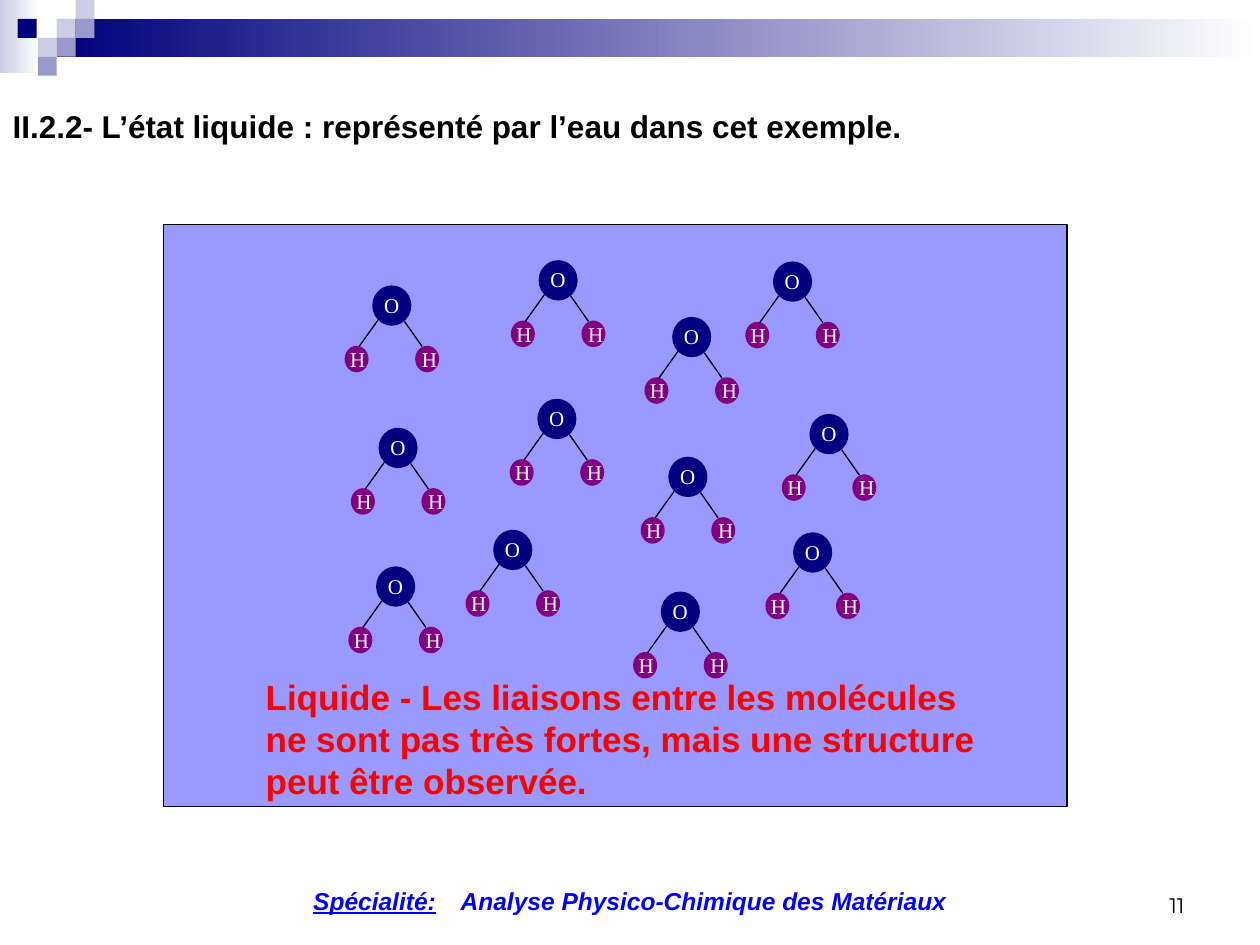
from pptx import Presentation
from pptx.dml.color import RGBColor
from pptx.enum.shapes import MSO_CONNECTOR, MSO_SHAPE
from pptx.enum.text import MSO_ANCHOR, MSO_AUTO_SIZE, PP_ALIGN
from pptx.oxml.ns import qn
from pptx.util import Inches, Pt
from lxml.etree import SubElement

TITLE = "II.2.2- L’état liquide : représenté par l’eau dans cet exemple."
CAPTION = ("Liquide - Les liaisons entre les molécules ne sont pas très fortes, "
           "mais une structure peut être observée.")
FOOTER = [("Spécialité:", True), ("\u2003Analyse Physico-Chimique des Matériaux", False)]
PAGE = "11"

BANDS = [((0, 0, 0.31, 0.58), "CCCCE6"), ((0.45, 0.15, 9.55, 0.3), "00007D")]
TILE = 0.15
TILES = [
    (0.45, 0.15, "CCCCE6"), (0.6, 0, "CCCCE6"), (0.6, 0.15, "9999CC"),
    (0.3, 0.3, "CCCCE6"), (0.14, 0.15, "00007D"), (0.45, 0.3, "9999CC"),
    (0.3, 0.45, "9999CC"),
]
PANEL = (1.3, 1.78, 7.17, 4.62)
MOLECULES = [
    (2.96, 2.27), (4.28, 2.07), (5.34, 2.52), (6.14, 2.08),
    (3.01, 3.4), (4.27, 3.17), (5.31, 3.63), (6.43, 3.29),
    (2.99, 4.5), (3.92, 4.21), (5.25, 4.7), (6.3, 4.23),
]
ATOMS = [
    ("H", (0.34, 0.48, 0.18, 0.2), (0.29, 0.43, 0.32, 0.3), "800080"),
    ("O", (0, 0, 0.3, 0.31), (-0.01, 0, 0.33, 0.3), "000080"),
    ("H", (-0.22, 0.48, 0.18, 0.2), (-0.28, 0.43, 0.32, 0.3), "800080"),
]
BONDS = [(0.04, 0.27, -0.11, 0.48), (0.25, 0.28, 0.39, 0.48)]


def rgb(color):
    return RGBColor.from_string(color)


def lengths(box, x=0, y=0):
    a, b, c, d = box
    return [Inches(v) for v in (a + x, b + y, c, d)]


def add_filled(shapes, kind, box, color, line=None, x=0, y=0):
    sp = shapes.add_shape(kind, *lengths(box, x, y))
    sp.shadow.inherit = False
    sp.fill.solid()
    sp.fill.fore_color.rgb = rgb(color)
    if line:
        sp.line.color.rgb = rgb(line)
        sp.line.width = Pt(0.75)
    else:
        sp.line.fill.background()
    return sp


def add_run(p, text, size, color, font="Arial", bold=False, italic=False, underline=False):
    r = p.add_run()
    r.text = text
    r.font.name, r.font.size = font, Pt(size)
    r.font.bold, r.font.italic, r.font.underline = bold, italic, underline
    r.font.color.rgb = rgb(color)


def add_text(shapes, box, x=0, y=0, wrap=True, align=PP_ALIGN.LEFT, anchor=MSO_ANCHOR.TOP):
    tf = shapes.add_textbox(*lengths(box, x, y)).text_frame
    tf.word_wrap = wrap
    tf.vertical_anchor = anchor
    p = tf.paragraphs[0]
    p.alignment = align
    return p


def add_bond(shapes, bond, x, y):
    x1, y1, x2, y2 = bond
    line = shapes.add_connector(MSO_CONNECTOR.STRAIGHT, Inches(x + x1), Inches(y + y1),
                                Inches(x + x2), Inches(y + y2))
    line.line.color.rgb = rgb("000000")
    line.line.width = Pt(0.75)
    SubElement(line._element.spPr, qn("a:effectLst"))


def add_molecule(s, x, y):
    shapes = s.shapes.add_group_shape().shapes
    for symbol, disc, label, color in ATOMS:
        add_filled(shapes, MSO_SHAPE.OVAL, disc, color, color, x, y)
        p = add_text(shapes, label, x, y, wrap=False)
        add_run(p, symbol, 12, "FFFFFF", "Times New Roman")
    for bond in BONDS:
        add_bond(shapes, bond, x, y)


def add_title(s):
    title = s.shapes.title
    title.left, title.top, title.width, title.height = lengths((0, 0.65, 10, 0.56))
    tf = title.text_frame
    tf.word_wrap = True
    tf.auto_size = MSO_AUTO_SIZE.NONE
    tf.vertical_anchor = MSO_ANCHOR.TOP
    p = tf.paragraphs[0]
    p.alignment = PP_ALIGN.LEFT
    p.line_spacing = 1.5
    p.space_before = Pt(6)
    add_run(p, TITLE, 18, "000000", bold=True)


def main():
    prs = Presentation()
    prs.slide_width, prs.slide_height = Inches(10), Inches(7.5)
    s = prs.slides.add_slide(prs.slide_layouts[5])

    for box, color in BANDS:
        fill = add_filled(s.shapes, MSO_SHAPE.RECTANGLE, box, color).fill
        fill.gradient()
        fill.gradient_angle = 0
        for stop, shade in zip(fill.gradient_stops, (color, "FFFFFF")):
            stop.color.rgb = rgb(shade)
    for x, y, color in TILES:
        add_filled(s.shapes, MSO_SHAPE.RECTANGLE, (x, y, TILE, TILE), color)

    add_filled(s.shapes, MSO_SHAPE.RECTANGLE, PANEL, "9999FF", "000000")
    for x, y in MOLECULES:
        add_molecule(s, x, y)
    add_run(add_text(s.shapes, (2.01, 5.31, 5.98, 1.11)), CAPTION, 20, "FF0000", bold=True)

    add_title(s)
    p = add_text(s.shapes, (7.17, 6.83, 2.33, 0.5), align=PP_ALIGN.RIGHT,
                 anchor=MSO_ANCHOR.BOTTOM)
    add_run(p, PAGE, 12, "000000", "Montserrat")
    p = add_text(s.shapes, (0.02, 6.98, 9.96, 0.34), align=PP_ALIGN.CENTER)
    for text, underline in FOOTER:
        add_run(p, text, 14, "0000FF", bold=True, italic=True, underline=underline)

    prs.save("out.pptx")


if __name__ == "__main__":
    main()
